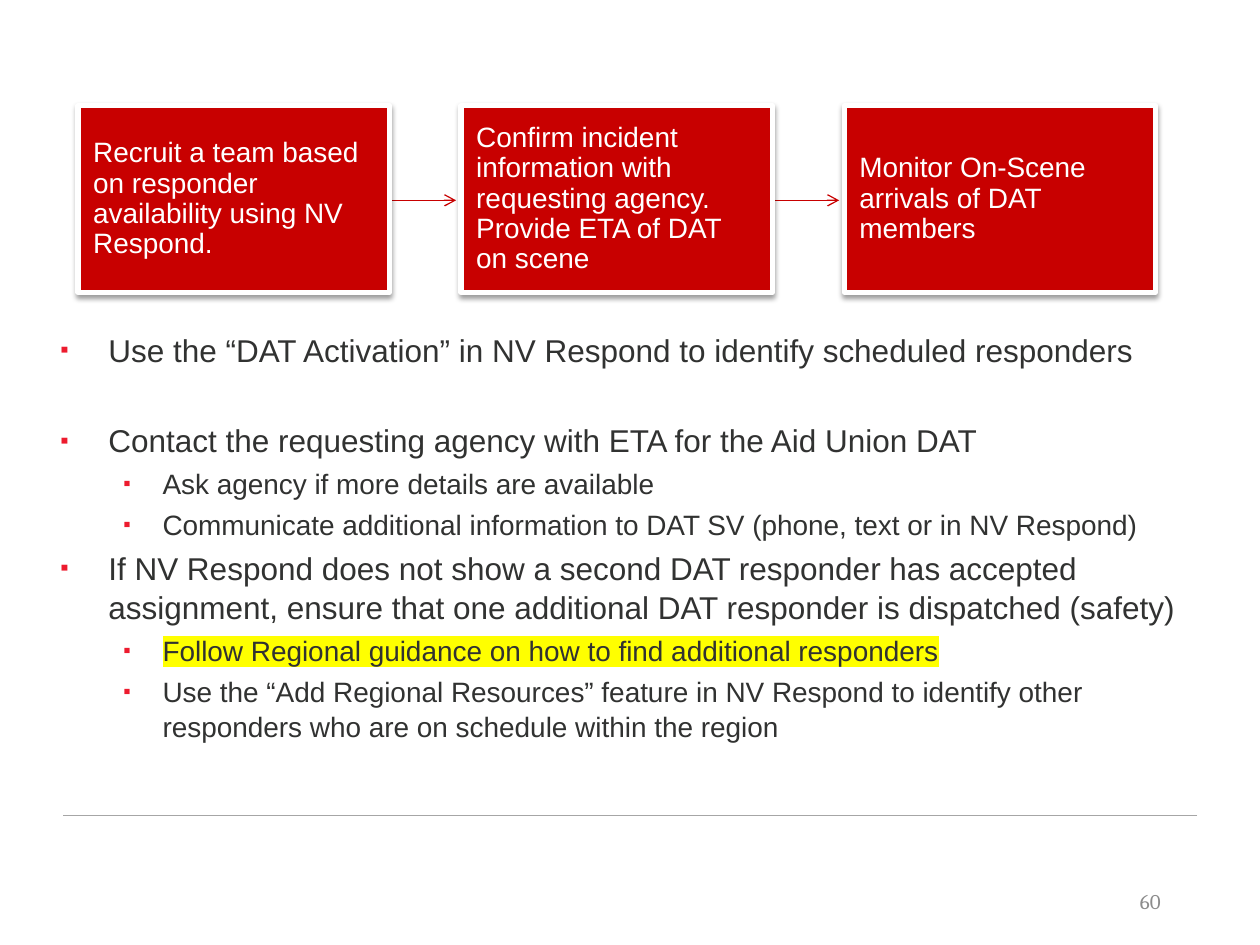
"""Build the slide on dispatching responders: three linked steps above a bulleted list."""
from lxml import etree
from pptx import Presentation
from pptx.dml.color import RGBColor
from pptx.enum.shapes import MSO_CONNECTOR as CONN, MSO_SHAPE as SHAPE
from pptx.enum.text import MSO_ANCHOR as ANCHOR, MSO_AUTO_SIZE as FIT, PP_ALIGN as ALIGN
from pptx.oxml import parse_xml
from pptx.oxml.ns import qn
from pptx.util import Inches, Pt

NS = 'xmlns:a="http://schemas.openxmlformats.org/drawingml/2006/main"'
RED, GREY, YELLOW = "C80000", "A6A6A6", "FFFF00"


def rgb(value):
    return RGBColor.from_string(value)


def add_run(p, text, size, color, name="Arial"):
    r = p.add_run()
    r.text = text
    for key, value in {"size": Pt(size), "name": name}.items():
        setattr(r.font, key, value)
    r.font.color.rgb = rgb(color)
    return r


prs = Presentation()
prs.slide_width, prs.slide_height = Inches(10), Inches(7.5)
s = prs.slides.add_slide(prs.slide_layouts[1])
title = s.shapes.title
title.element.getparent().remove(title.element)

steps = [
    "Recruit a team based on responder availability using NV Respond.",
    "Confirm incident information with requesting agency. Provide ETA of DAT on scene",
    "Monitor On-Scene arrivals of DAT members",
]
left, top, width, height, pitch = 0.62, 0.84, 2.47, 1.48, 3.04
mid = top + height / 2 + 0.01
lines = [(9.5, 6.47, 0.5, 6.47, GREY, False)]
for i in range(len(steps) - 1):
    start = left + i * pitch + width
    lines.append((start, mid, start + 0.53, mid, RED, True))

for x1, y1, x2, y2, color, arrow in lines:
    c = s.shapes.add_connector(CONN.STRAIGHT, Inches(x1), Inches(y1), Inches(x2), Inches(y2))
    c.line.color.rgb = rgb(color)
    c.line.width = Pt(0.75)
    spPr = c.element.spPr
    etree.SubElement(spPr, qn("a:effectLst"))
    if arrow:
        etree.SubElement(spPr.find(qn("a:ln")), qn("a:tailEnd"), type="arrow")

for i, text in enumerate(steps):
    sp = s.shapes.add_shape(SHAPE.RECTANGLE, Inches(left + i * pitch), Inches(top),
                            Inches(width), Inches(height))
    sp.fill.solid()
    sp.fill.fore_color.rgb = rgb(RED)
    sp.line.color.rgb = rgb("FFFFFF")
    sp.line.width = Pt(3)
    sp.shadow.inherit = False
    sp.element.spPr.find(qn("a:effectLst")).append(parse_xml(
        f'<a:outerShdw {NS} blurRad="{Pt(3.1)}" dist="{Pt(1.6)}" dir="5400000" rotWithShape="0">'
        '<a:srgbClr val="000000"><a:alpha val="38000"/></a:srgbClr></a:outerShdw>'))
    tf = sp.text_frame
    tf.word_wrap = True
    tf.vertical_anchor = ANCHOR.MIDDLE
    for side in ("left", "top", "right", "bottom"):
        setattr(tf, f"margin_{side}", Inches(0.12))
    p = tf.paragraphs[0]
    p.alignment = ALIGN.LEFT
    p.line_spacing = 0.9
    add_run(p, text, 16, "FFFFFF")

bullets = [
    (0, 0, "Use the “DAT Activation” in NV Respond to identify scheduled responders", False),
    (0, 29, "Contact the requesting agency with ETA for the Aid Union DAT", False),
    (1, 3.2, "Ask agency if more details are available", False),
    (1, 3.2, "Communicate additional information to DAT SV (phone, text or in NV Respond)", False),
    (0, 3.6, "If NV Respond does not show a second DAT responder has accepted assignment, "
             "ensure that one additional DAT responder is dispatched (safety)", False),
    (1, 3.2, "Follow Regional guidance on how to find additional responders", True),
    (1, 3.2, "Use the “Add Regional Resources” feature in NV Respond to identify other "
             "responders who are on schedule within the region", False),
]
levels = [(0.38, -0.38, 18), (0.81, -0.31, 16)]
body = s.placeholders[1]
body.left, body.top, body.width, body.height = (Inches(v) for v in (0.38, 2.56, 9.31, 3.74))
tf = body.text_frame
tf.word_wrap = True
tf.auto_size = FIT.NONE
tf.vertical_anchor = ANCHOR.TOP
for i, (level, before, text, marked) in enumerate(bullets):
    p = tf.paragraphs[0] if i == 0 else tf.add_paragraph()
    margin, indent, size = levels[level]
    p.level = level
    pPr = p._p.get_or_add_pPr()
    pPr.set("marL", str(Inches(margin)))
    pPr.set("indent", str(Inches(indent)))
    for xml in (f'<a:buClr {NS}><a:srgbClr val="ED1B2E"/></a:buClr>',
                f'<a:buSzPct {NS} val="75000"/>',
                f'<a:buFont {NS} typeface="Arial"/>',
                f'<a:buChar {NS} char="▪"/>'):
        pPr.append(parse_xml(xml))
    for key, value in {"space_before": Pt(before), "line_spacing": 1.05}.items():
        setattr(p, key, value)
    r = add_run(p, text, size, "313231")
    if marked:
        r._r.rPr.find(qn("a:solidFill")).addnext(parse_xml(
            f'<a:highlight {NS}><a:srgbClr val="{YELLOW}"/></a:highlight>'))

number = s.shapes.add_textbox(Inches(7.06), Inches(6.95), Inches(2.25), Inches(0.4))
tf = number.text_frame
tf.word_wrap = True
tf.vertical_anchor = ANCHOR.MIDDLE
p = tf.paragraphs[0]
p.alignment = ALIGN.RIGHT
add_run(p, "60", 12, "8C8C8C", "Cambria")

prs.save("out.pptx")
